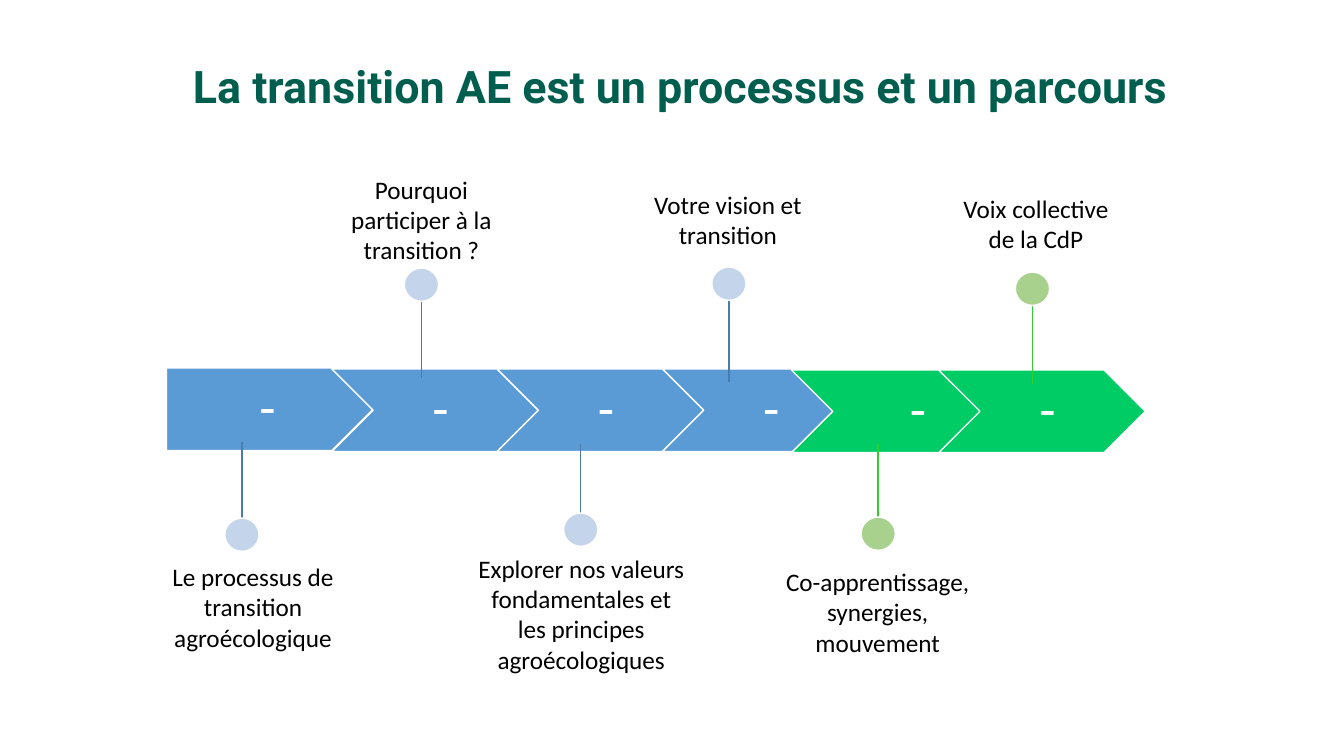
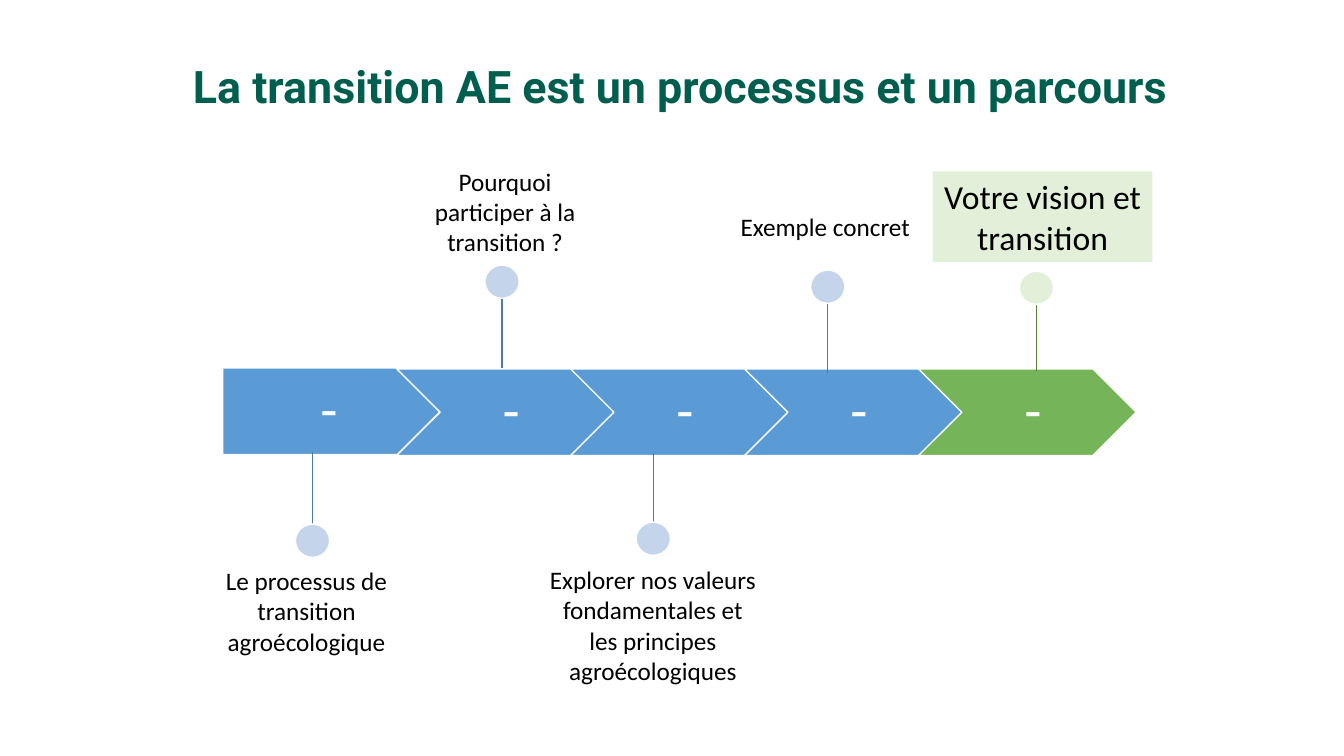
from pptx import Presentation
from pptx.dml.color import RGBColor
from pptx.enum.shapes import MSO_CONNECTOR, MSO_SHAPE
from pptx.enum.text import MSO_ANCHOR, MSO_AUTO_SIZE, PP_ALIGN
from pptx.oxml.ns import qn
from pptx.util import Inches, Pt
from lxml import etree

COLORS = {
    "title": "005E4F", "text": "000000", "white": "FFFFFF",
    "blue": "5B9BD5", "blue_dot": "C4D5EB", "blue_line": "497CAB",
    "green": "00CC66", "green_dot": "A9D18E", "green_line": "33CC33",
    "leaf": "75B459", "leaf_dot": "E2F0D9", "leaf_line": "548235",
}
FORMATS = {
    "title": {"name": "Roboto", "size": Pt(32), "bold": True},
    "label": {"name": "Calibri", "size": Pt(18)},
    "highlight": {"name": "Calibri", "size": Pt(24)},
    "arrow": {"name": "Calibri", "size": Pt(38)},
    "large_arrow": {"name": "Calibri", "size": Pt(40)},
}
TITLE = "La transition AE est un processus et un parcours"
PROCESS = "Le processus de transition agroécologique"
WHY = "Pourquoi participer à la transition ?"
VALUES = "Explorer nos valeurs fondamentales et les principes agroécologiques"
VISION = "Votre vision et transition"
DOT_WIDTH, DOT_HEIGHT = 0.34, 0.33


def rgb(name):
    return RGBColor.from_string(COLORS[name])


class Deck:
    def __init__(self):
        self.presentation = Presentation()
        self.presentation.slide_width = Inches(13.33)
        self.presentation.slide_height = Inches(7.5)
        self.slide = None

    def new_slide(self, title):
        layout = self.presentation.slide_layouts[5]
        self.slide = self.presentation.slides.add_slide(layout)
        shape = self.slide.shapes.title
        shape.left, shape.top = Inches(0.73), Inches(0.47)
        shape.width, shape.height = Inches(12.04), Inches(0.82)
        self.set_text(shape, title, "title", "title", MSO_ANCHOR.MIDDLE, 0.9)

    def set_text(self, shape, text, style, color, anchor=MSO_ANCHOR.TOP, spacing=None):
        frame = shape.text_frame
        frame.text = text
        frame.word_wrap = True
        frame.auto_size = MSO_AUTO_SIZE.NONE
        frame.vertical_anchor = anchor
        for paragraph in frame.paragraphs:
            paragraph.alignment = PP_ALIGN.CENTER
            paragraph.line_spacing = spacing
            for name, value in FORMATS[style].items():
                setattr(paragraph.font, name, value)
            paragraph.font.color.rgb = rgb(color)

    def shape(self, kind, left, top, width, height, fill, outline="white"):
        shape = self.slide.shapes.add_shape(
            kind, Inches(left), Inches(top), Inches(width), Inches(height))
        shape.shadow.inherit = False
        shape.fill.solid()
        shape.fill.fore_color.rgb = rgb(fill)
        if outline:
            shape.line.color.rgb = rgb(outline)
            shape.line.width = Pt(1)
        else:
            shape.line.fill.background()
        return shape

    def road(self, arrows, height, style):
        """Draw a chain of arrows given as (left, top, width, fill)."""
        for index, (left, top, width, fill) in enumerate(arrows):
            kind = MSO_SHAPE.CHEVRON if index else MSO_SHAPE.PENTAGON
            shape = self.shape(kind, left, top, width, height, fill)
            self.set_text(shape, "-", style, "white", MSO_ANCHOR.MIDDLE, 0.9)
            margins = {"margin_left": 0.17 if index else 0.22, "margin_right": 0.06,
                       "margin_top": 0.11, "margin_bottom": 0.11}
            for name, value in margins.items():
                setattr(shape.text_frame, name, Inches(value))

    def stem(self, x, start, end, color):
        line = self.slide.shapes.add_connector(
            MSO_CONNECTOR.STRAIGHT, Inches(x), Inches(start), Inches(x), Inches(end))
        line.line.color.rgb = rgb(color)
        line.line.width = Pt(1)
        etree.SubElement(line._element.spPr, qn("a:effectLst"))

    def label(self, text, left, top, width, lines, fill=None):
        style = "highlight" if fill else "label"
        height = 0.1 + lines * FORMATS[style]["size"].pt / 60
        if fill:
            shape = self.shape(MSO_SHAPE.RECTANGLE, left, top, width, height, fill, None)
        else:
            shape = self.slide.shapes.add_textbox(
                Inches(left), Inches(top), Inches(width), Inches(height))
        self.set_text(shape, text, style, "text")

    def milestone(self, x, dot_top, road_y, tone, label):
        self.stem(x, dot_top + DOT_HEIGHT / 2, road_y, tone + "_line")
        self.shape(MSO_SHAPE.OVAL, x - DOT_WIDTH / 2, dot_top,
                   DOT_WIDTH, DOT_HEIGHT, tone + "_dot")
        self.label(*label)


def main():
    deck = Deck()

    deck.new_slide(TITLE)
    arrows = [(1.65 + 1.64 * i, 3.66 if i else 3.65, 2.05, "blue") for i in range(4)]
    arrows += [(7.85, 3.67, 2.4, "green"), (9.31, 3.67, 2.05, "green")]
    deck.road(arrows, 0.82, "arrow")
    for milestone in (
        (2.4, 5.14, 4.39, "blue", (PROCESS, 1.56, 5.52, 1.9, 3)),
        (4.18, 2.66, 3.75, "blue", (WHY, 3.15, 1.68, 2.06, 3)),
        (5.76, 5.09, 4.4, "blue", (VALUES, 4.62, 5.44, 2.29, 4)),
        (7.23, 2.65, 3.79, "blue", (VISION, 6.13, 1.83, 2.18, 2)),
        (8.71, 5.13, 4.4, "green",
         ("Co-apprentissage, synergies,\nmouvement", 7.66, 5.57, 2.09, 3)),
        (10.24, 2.7, 3.81, "green", ("Voix collective de la CdP", 9.39, 1.87, 1.77, 2)),
    ):
        deck.milestone(*milestone)

    deck.new_slide(TITLE)
    arrows = [(2.21 + 6.9 * i / 4, 3.66 if i else 3.65, 2.16, "blue" if i < 4 else "leaf")
              for i in range(5)]
    deck.road(arrows, 0.86, "large_arrow")
    for milestone in (
        (3.1, 5.2, 4.48, "blue", (PROCESS, 2.09, 5.56, 1.9, 3)),
        (4.98, 2.63, 3.65, "blue", (WHY, 3.98, 1.6, 2.06, 3)),
        (6.48, 5.18, 4.49, "blue", (VALUES, 5.33, 5.55, 2.29, 4)),
        (8.21, 2.68, 3.7, "blue", ("Exemple concret", 7.24, 2.05, 1.89, 1)),
        (10.28, 2.69, 3.68, "leaf", (VISION, 9.25, 1.7, 2.18, 2, "leaf_dot")),
    ):
        deck.milestone(*milestone)

    deck.presentation.save("out.pptx")


if __name__ == "__main__":
    main()
